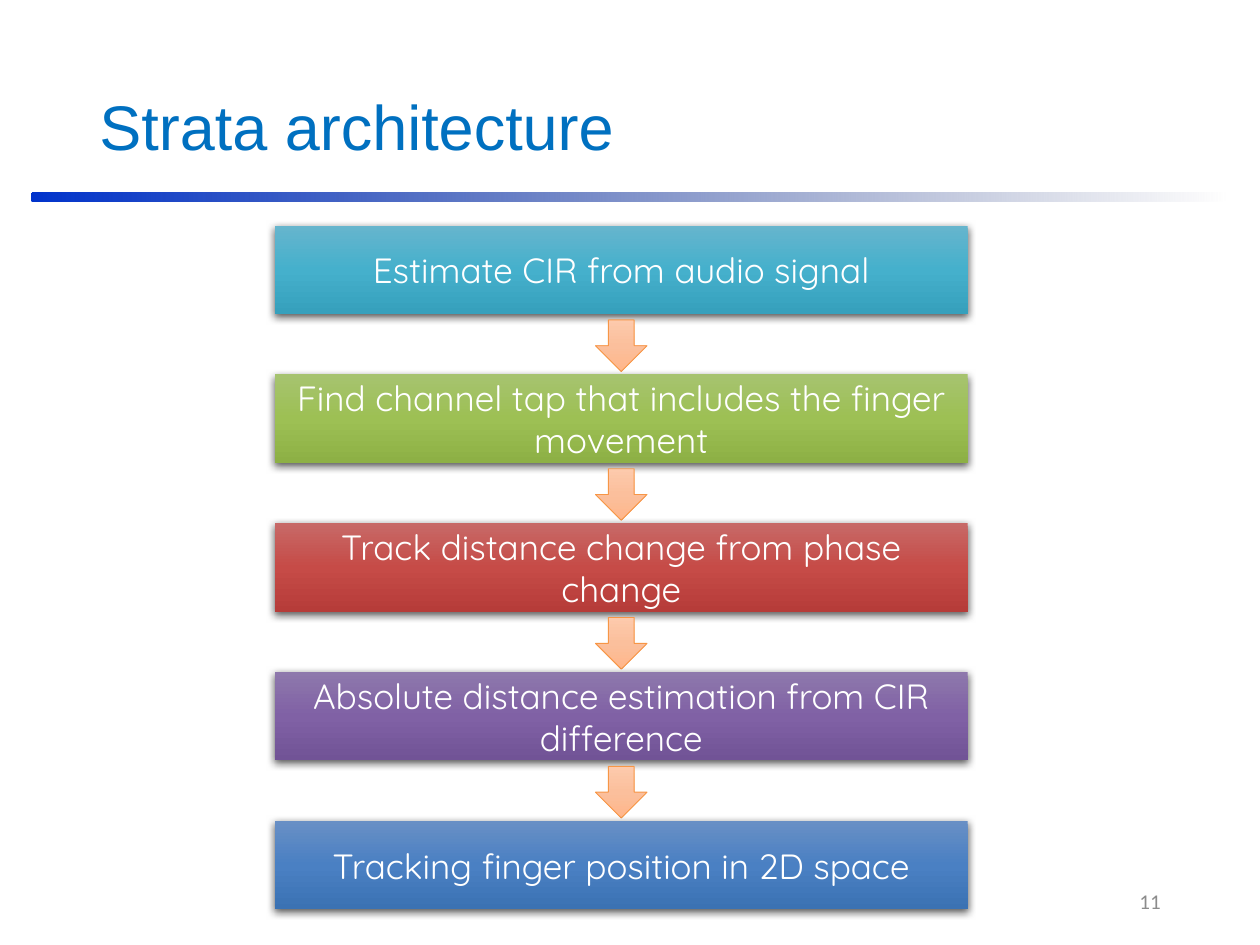
from lxml.etree import SubElement
from pptx import Presentation
from pptx.dml.color import RGBColor
from pptx.enum.shapes import MSO_SHAPE
from pptx.enum.text import MSO_ANCHOR, MSO_AUTO_SIZE, PP_ALIGN
from pptx.oxml.ns import qn
from pptx.util import Cm, Pt

COLORS = {
    "title": "0070C0",
    "page_number": "8C8C8C",
    "step_text": "FFFFFF",
    "arrow_line": "F79646",
    "shadow": "000000",
}
GRADIENTS = {
    "rule": ["0033CC", "00185E"],
    "arrow": ["FDCAAC", "FBBF9C", "FFB68A"],
    "teal": ["66B5CD", "45B0CC", "36A0BC"],
    "green": ["A6C36F", "9DC054", "8DB045"],
    "red": ["C76967", "C64B47", "B63C39"],
    "purple": ["8E78AC", "8061A5", "715396"],
    "blue": ["688FC5", "4A80C3", "3B72B3"],
}
STEPS = [
    ("Estimate CIR from audio signal", "teal"),
    ("Find channel tap that includes the finger movement", "green"),
    ("Track distance change from phase change", "red"),
    ("Absolute distance estimation from CIR difference", "purple"),
    ("Tracking finger position in 2D space", "blue"),
]
STEP_LEFT, STEP_WIDTH, STEP_HEIGHT = Cm(5.54), Cm(13.97), Cm(1.78)
FIRST_TOP, STEP_PITCH = Cm(4.55), Cm(3)
ARROW_SIZE, ARROW_OFFSET = Cm(1.04), Cm(1.9)


def write_text(shape, text, *, font, size, color, align=PP_ALIGN.CENTER, line_spacing=None):
    frame = shape.text_frame
    frame.word_wrap = True
    frame.auto_size = MSO_AUTO_SIZE.NONE
    frame.vertical_anchor = MSO_ANCHOR.MIDDLE
    paragraph = frame.paragraphs[0]
    paragraph.alignment = align
    paragraph.line_spacing = line_spacing
    run = paragraph.add_run()
    run.text = text
    run.font.name = font
    run.font.size = Pt(size)
    run.font.color.rgb = RGBColor.from_string(COLORS[color])


def fill_gradient(shape, name, angle=270, fade_out=False):
    """Spread the colours evenly; fade_out makes the last one transparent."""
    shape.fill.gradient()
    shape.fill.gradient_angle = angle
    stops = shape._element.spPr.find(qn("a:gradFill")).find(qn("a:gsLst"))
    for stop in list(stops):
        stops.remove(stop)
    colors = GRADIENTS[name]
    for index, value in enumerate(colors):
        position = 100000 * index // (len(colors) - 1)
        stop = SubElement(stops, qn("a:gs"), pos=str(position))
        color = SubElement(stop, qn("a:srgbClr"), val=value)
    if fade_out:
        SubElement(color, qn("a:alpha"), val="0")


def add_gradient_shape(slide, preset, left, top, width, height, gradient, **fill_options):
    shape = slide.shapes.add_shape(preset, left, top, width, height)
    shape.shadow.inherit = False
    shape.line.fill.background()
    fill_gradient(shape, gradient, **fill_options)
    return shape


def add_drop_shadow(shape):
    effects = shape._element.spPr.find(qn("a:effectLst"))
    shadow = SubElement(effects, qn("a:outerShdw"), blurRad=str(Pt(4.5)),
                        dist=str(Pt(1.5)), dir="5400000", rotWithShape="0")
    color = SubElement(shadow, qn("a:srgbClr"), val=COLORS["shadow"])
    SubElement(color, qn("a:alpha"), val="63000")


def add_step(slide, text, gradient, top):
    step = add_gradient_shape(slide, MSO_SHAPE.RECTANGLE, STEP_LEFT, top,
                              STEP_WIDTH, STEP_HEIGHT, gradient)
    add_drop_shadow(step)
    write_text(step, text, font="Quicksand", size=20, color="step_text")


def add_down_arrow(slide, top):
    left = STEP_LEFT + (STEP_WIDTH - ARROW_SIZE) // 2
    arrow = add_gradient_shape(slide, MSO_SHAPE.DOWN_ARROW, left, top,
                               ARROW_SIZE, ARROW_SIZE, "arrow")
    arrow.line.color.rgb = RGBColor.from_string(COLORS["arrow_line"])
    arrow.line.width = Pt(0.5)


def add_title(slide, text):
    title = slide.shapes.title
    title.left, title.top, title.width, title.height = Cm(1.75), Cm(1.8), Cm(21.9), Cm(1.65)
    write_text(title, text, font="Arial", size=36, color="title",
               align=PP_ALIGN.LEFT, line_spacing=0.9)


def add_page_number(slide, number):
    page_number = slide.shapes.add_textbox(Cm(17.93), Cm(17.65), Cm(5.72), Cm(1.02))
    write_text(page_number, number, font="Calibri", size=12, color="page_number",
               align=PP_ALIGN.RIGHT)


def main():
    presentation = Presentation()
    presentation.slide_width, presentation.slide_height = Cm(25.4), Cm(19.05)
    slide = presentation.slides.add_slide(presentation.slide_layouts[5])

    add_gradient_shape(slide, MSO_SHAPE.ROUNDED_RECTANGLE, Cm(0.64), Cm(3.89),
                       Cm(24.13), Cm(0.18), "rule", angle=0, fade_out=True)
    add_title(slide, "Strata architecture")
    add_page_number(slide, "11")
    for index, (text, gradient) in enumerate(STEPS):
        top = FIRST_TOP + index * STEP_PITCH
        add_step(slide, text, gradient, top)
        if index < len(STEPS) - 1:
            add_down_arrow(slide, top + ARROW_OFFSET)

    presentation.save("out.pptx")


if __name__ == "__main__":
    main()
